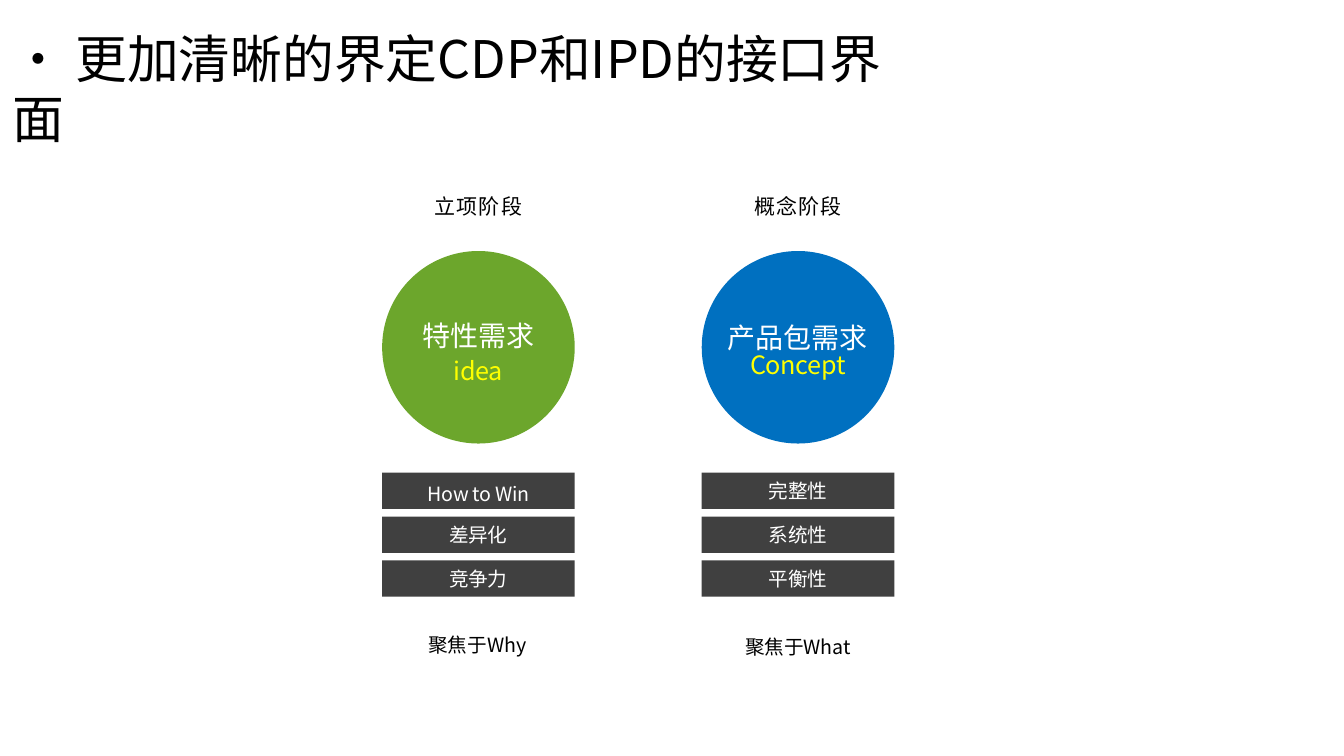
from dataclasses import dataclass

from lxml import etree
from pptx import Presentation
from pptx.dml.color import RGBColor
from pptx.enum.shapes import MSO_SHAPE
from pptx.enum.text import MSO_ANCHOR, PP_ALIGN
from pptx.oxml.ns import qn
from pptx.shapes.autoshape import Shape
from pptx.slide import Slide
from pptx.util import Inches, Pt

OVAL, RECTANGLE = MSO_SHAPE.OVAL, MSO_SHAPE.RECTANGLE
TOP, MIDDLE = MSO_ANCHOR.TOP, MSO_ANCHOR.MIDDLE
LEFT, CENTER = PP_ALIGN.LEFT, PP_ALIGN.CENTER

FONT = "Noto Sans CJK SC"
BLACK, WHITE, YELLOW = "000000", "FFFFFF", "FFFF00"
GREEN, BLUE, DARK_GRAY = "6CA62C", "0070C0", "404040"

COLUMN_WIDTH = 1.91
CIRCLE_TOP = 2.49
BAR_TOP, BAR_HEIGHT, BAR_PITCH = 4.69, 0.36, 0.435
LABEL_TOP, LABEL_WIDTH, LABEL_HEIGHT = 1.91, 0.91, 0.26
FOCUS_TOP = 6.3


@dataclass(frozen=True)
class Line:
    text: str
    size: float
    color: str
    spacing: float | None = None  # exact line height in points
    tracking: float = 0  # letter spacing in points


@dataclass(frozen=True)
class Stage:
    left: float
    label: str
    color: str
    circle_lines: tuple[Line, Line]
    bars: tuple[str, str, str]
    focus: Line
    focus_left: float
    focus_width: float


STAGES = (
    Stage(3.79, "立项阶段", GREEN,
          (Line("特性需求", 20, WHITE, 31, -0.2), Line("idea", 18, YELLOW, 24, -0.3)),
          ("How to Win", "差异化", "竞争力"),
          Line("聚焦于Why", 14, BLACK, 15, -0.1), 4.25, 1.0),
    Stage(6.96, "概念阶段", BLUE,
          (Line("产品包需求", 20, WHITE, 28.5), Line("Concept", 18, YELLOW, 18, -0.2)),
          ("完整性", "系统性", "平衡性"),
          Line("聚焦于What", 14, BLACK, 16.5, -0.1), 7.39, 1.08),
)


def rgb(color: str) -> RGBColor:
    return RGBColor.from_string(color)


def write_lines(shape: Shape, lines: tuple[Line, ...], align: PP_ALIGN,
                anchor: MSO_ANCHOR, wrap: bool) -> None:
    frame = shape.text_frame
    frame.margin_left = frame.margin_right = frame.margin_top = frame.margin_bottom = 0
    frame.word_wrap = wrap
    frame.vertical_anchor = anchor
    frame.text = "\n".join(line.text for line in lines)
    for para, line in zip(frame.paragraphs, lines):
        para.alignment = align
        if line.spacing:
            para.line_spacing = Pt(line.spacing)
        for span in para.runs:
            span.font.size = Pt(line.size)
            span.font.color.rgb = rgb(line.color)
            span.font.name = FONT
            properties = span.font._element
            properties.set("spc", str(round(line.tracking * 100)))
            etree.SubElement(properties, qn("a:ea")).set("typeface", FONT)


def add_text(page: Slide, left: float, top: float, width: float, height: float,
             line: Line, align: PP_ALIGN = LEFT, wrap: bool = True) -> None:
    box = page.shapes.add_textbox(Inches(left), Inches(top), Inches(width), Inches(height))
    write_lines(box, (line,), align, TOP, wrap)


def add_filled(page: Slide, preset: MSO_SHAPE, left: float, top: float, height: float,
               fill: str, lines: tuple[Line, ...]) -> Shape:
    """Add a borderless shape of column width with centred text."""
    shape = page.shapes.add_shape(preset, Inches(left), Inches(top),
                                  Inches(COLUMN_WIDTH), Inches(height))
    shape.shadow.inherit = False
    shape.fill.solid()
    shape.fill.fore_color.rgb = rgb(fill)
    shape.line.fill.background()
    write_lines(shape, lines, CENTER, MIDDLE, wrap=False)
    return shape


def add_stage(page: Slide, stage: Stage) -> None:
    label_left = stage.left + (COLUMN_WIDTH - LABEL_WIDTH) / 2
    add_text(page, label_left, LABEL_TOP, LABEL_WIDTH, LABEL_HEIGHT,
             Line(stage.label, 15, BLACK, 18.7, 0.8), CENTER, wrap=False)
    add_filled(page, OVAL, stage.left, CIRCLE_TOP, COLUMN_WIDTH, stage.color,
               stage.circle_lines)
    for row, text in enumerate(stage.bars):
        bar = add_filled(page, RECTANGLE, stage.left, BAR_TOP + row * BAR_PITCH, BAR_HEIGHT,
                         DARK_GRAY, (Line(text, 14, WHITE, tracking=-0.2),))
        if text.isascii():
            bar.text_frame.margin_top = Inches(0.05)
    add_text(page, stage.focus_left, FOCUS_TOP, stage.focus_width, 0.46, stage.focus)


def main() -> None:
    deck = Presentation()
    deck.slide_width, deck.slide_height = Inches(13.33), Inches(7.5)
    page = deck.slides.add_slide(deck.slide_layouts[6])
    add_text(page, 0.12, 0.28, 8.8, 1.2,
             Line("• 更加清晰的界定CDP和IPD的接口界面", 37, BLACK, 43))
    for stage in STAGES:
        add_stage(page, stage)
    deck.save("out.pptx")


if __name__ == "__main__":
    main()
